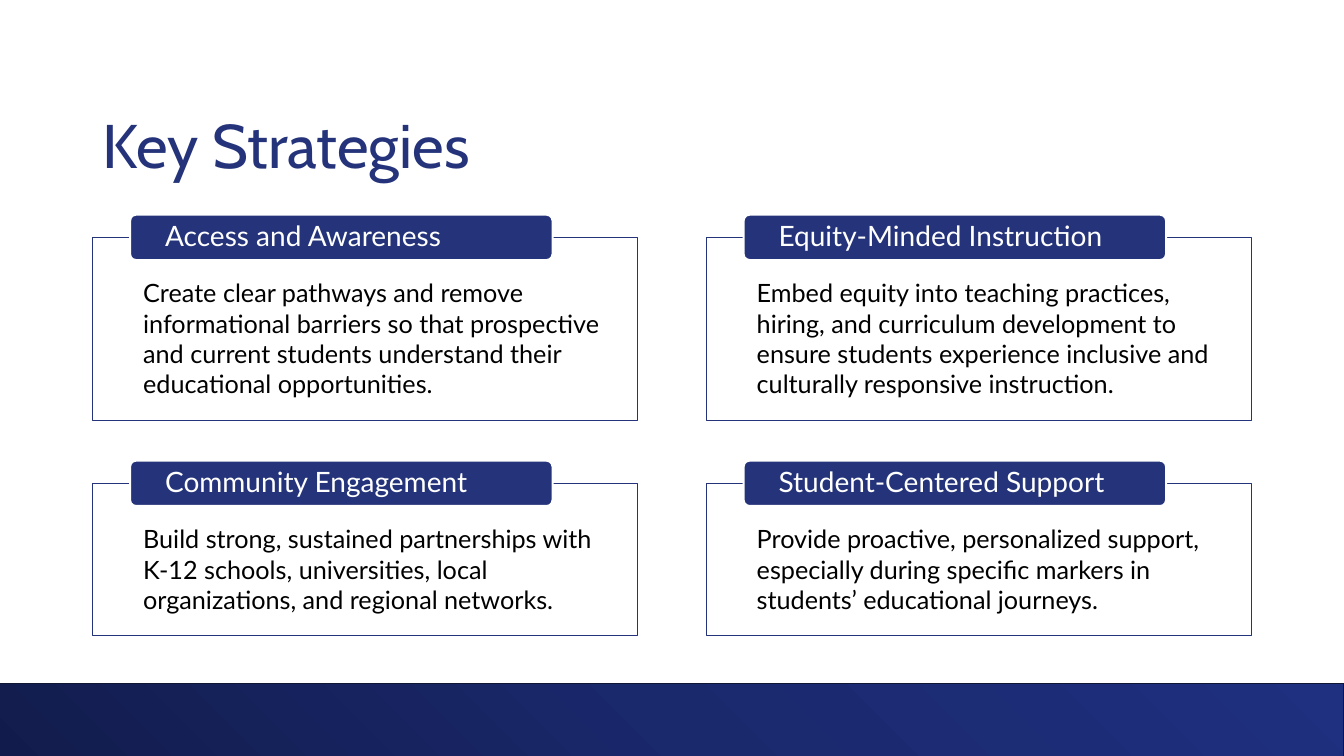
from lxml import etree
from pptx import Presentation
from pptx.dml.color import RGBColor
from pptx.enum.shapes import MSO_SHAPE as Preset
from pptx.enum.text import MSO_ANCHOR as Anchor, MSO_AUTO_SIZE as AutoSize, PP_ALIGN as Align
from pptx.oxml import parse_xml
from pptx.oxml.ns import nsdecls
from pptx.util import Inches, Pt

NAVY, WHITE, BLACK, EDGE = "25347A", "FFFFFF", "000000", "101735"
BAND_STOPS = ((0, "121C4C"), (50, "1A286C"), (100, "1F3080"))
WIDTH, HEIGHT = 13.33, 7.5
MARGIN, GUTTER = 0.92, 0.68
COLUMN_WIDTH = (WIDTH - 2 * MARGIN - GUTTER) / 2
ROW_TOPS = (2.13, 4.57)
CARD_HEIGHTS = (1.82, 1.51)
LABEL_WIDTH, LABEL_HEIGHT, LABEL_INDENT = 4.19, 0.45, 0.37

STRATEGIES = (
    (0, 0, "Access and Awareness",
     "Create clear pathways and remove informational barriers so that prospective "
     "and current students understand their educational opportunities."),
    (0, 1, "Community Engagement",
     "Build strong, sustained partnerships with K-12 schools, universities, local "
     "organizations, and regional networks."),
    (1, 0, "Equity-Minded Instruction",
     "Embed equity into teaching practices, hiring, and curriculum development to "
     "ensure students experience inclusive and culturally responsive instruction."),
    (1, 1, "Student-Centered Support",
     "Provide proactive, personalized support, especially during specific markers "
     "in students’ educational journeys."),
)


def color(value):
    return RGBColor.from_string(value)


class StrategySlide:
    title_font, body_font = "Cabin", "Lato"

    def __init__(self, presentation):
        self.slide = presentation.slides.add_slide(presentation.slide_layouts[5])

    def set_text(self, shape, text, size, font, text_color, insets, anchor, spacing=None):
        """Fill a shape with one paragraph; insets run left, top, right, bottom."""
        frame = shape.text_frame
        frame.word_wrap = True
        frame.auto_size = AutoSize.NONE
        frame.vertical_anchor = anchor
        (frame.margin_left, frame.margin_top,
         frame.margin_right, frame.margin_bottom) = map(Inches, insets)
        paragraph = frame.paragraphs[0]
        paragraph.alignment = Align.LEFT
        paragraph.line_spacing = spacing
        run = paragraph.add_run()
        run.text = text
        run.font.size = Pt(size)
        run.font.name = font
        run.font.color.rgb = color(text_color)

    def box(self, preset, left, top, width, height, line, line_width, fill=None):
        shape = self.slide.shapes.add_shape(preset, *map(Inches, (left, top, width, height)))
        shape.shadow.inherit = False
        if fill:
            shape.fill.solid()
            shape.fill.fore_color.rgb = color(fill)
        else:
            shape.fill.background()
        shape.line.color.rgb = color(line)
        shape.line.width = Pt(line_width)
        return shape

    def title(self, text):
        title = self.slide.shapes.title
        title.left, title.top = Inches(MARGIN), Inches(0.4)
        title.width, title.height = Inches(WIDTH - 2 * MARGIN), Inches(1.45)
        self.set_text(title, text, 44, self.title_font, NAVY,
                      (0.1, 0.05, 0.1, 0.05), Anchor.BOTTOM, 0.9)

    def band(self):
        """Draw the footer band with a gradient spreading from its lower left corner."""
        bleed, top = 0.03, 6.78
        band = self.box(Preset.RECTANGLE, -bleed, top, WIDTH + bleed,
                        HEIGHT + bleed - top, EDGE, 1)
        gradient = parse_xml(f'<a:gradFill {nsdecls("a")} rotWithShape="1"><a:gsLst/>'
                             '<a:path path="circle"><a:fillToRect t="100000" r="100000"/>'
                             '</a:path></a:gradFill>')
        for position, value in BAND_STOPS:
            stop = etree.SubElement(gradient[0], gradient[0].tag.replace("gsLst", "gs"),
                                    pos=str(position * 1000))
            etree.SubElement(stop, stop.tag.replace("}gs", "}srgbClr"), val=value)
        properties = band.element.spPr
        properties.replace(properties.find("{*}noFill"), gradient)

    def card(self, column, row, heading, text):
        left = MARGIN + column * (COLUMN_WIDTH + GUTTER)
        top = ROW_TOPS[row]
        body = self.box(Preset.RECTANGLE, left, top + LABEL_HEIGHT / 2,
                        COLUMN_WIDTH, CARD_HEIGHTS[row], NAVY, 0.75)
        self.set_text(body, text, 18, self.body_font, BLACK, (0.5, 0.4, 0.3, 0.2), Anchor.TOP)
        label = self.box(Preset.ROUNDED_RECTANGLE, left + LABEL_INDENT, top,
                         LABEL_WIDTH, LABEL_HEIGHT, WHITE, 1.5, NAVY)
        label.adjustments[0] = 0.13
        self.set_text(label, heading, 20, self.body_font, WHITE,
                      (0.33, 0.02, 0.33, 0.02), Anchor.MIDDLE, 0.9)


def main():
    presentation = Presentation()
    presentation.slide_width = Inches(WIDTH)
    presentation.slide_height = Inches(HEIGHT)
    page = StrategySlide(presentation)
    page.band()
    page.title("Key Strategies")
    for strategy in STRATEGIES:
        page.card(*strategy)
    presentation.save("out.pptx")


if __name__ == "__main__":
    main()
